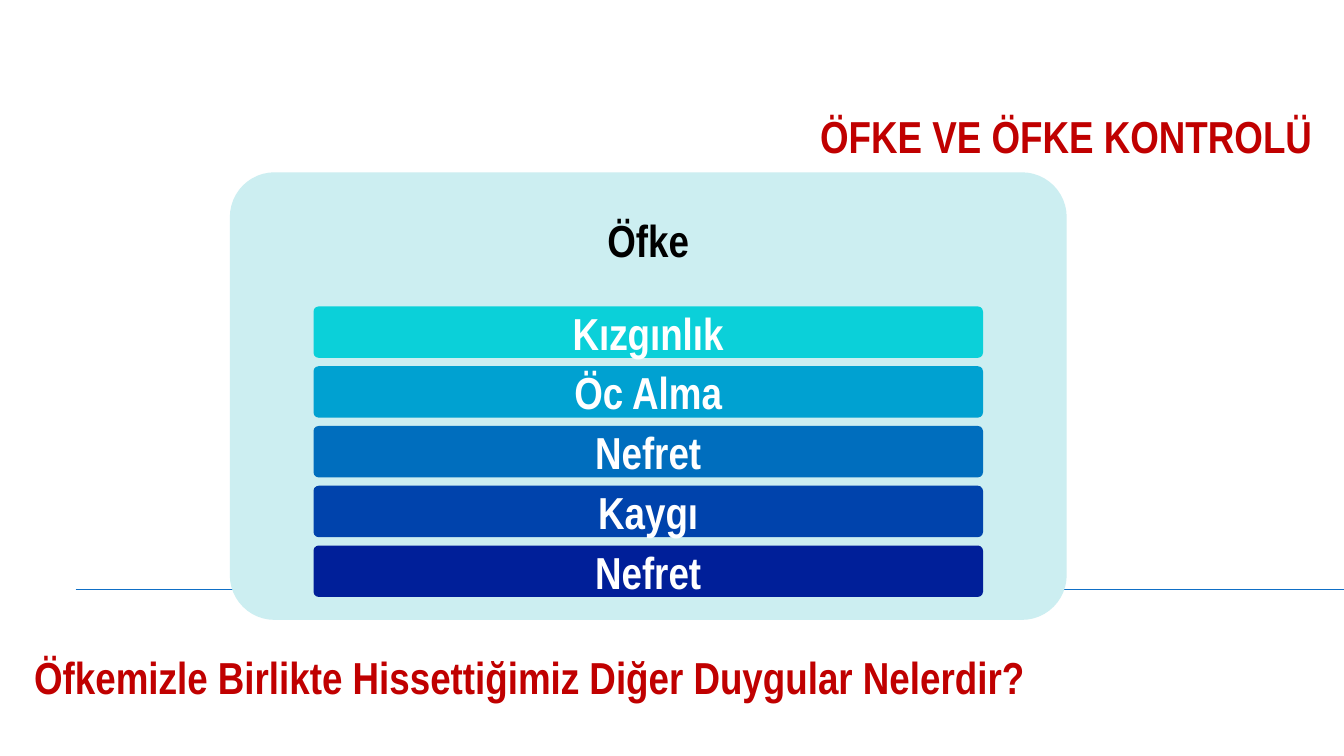
from dataclasses import dataclass

from lxml.etree import SubElement
from pptx import Presentation
from pptx.dml.color import RGBColor
from pptx.enum.shapes import MSO_CONNECTOR, MSO_SHAPE
from pptx.enum.text import MSO_ANCHOR, MSO_AUTO_SIZE, PP_ALIGN
from pptx.oxml.ns import qn
from pptx.shapes.autoshape import Shape
from pptx.slide import Slide
from pptx.text.text import TextFrame
from pptx.util import Inches, Pt

FONT = "Arial Narrow"
RED = "C00000"
WHITE = "FFFFFF"
BAR_TOP = 3.04
BAR_PITCH = 0.593


@dataclass
class Emotion:
    name: str
    fill: str


EMOTIONS = [
    Emotion("Kızgınlık", "0BD0D9"),
    Emotion("Öc Alma", "00A1D1"),
    Emotion("Nefret", "006EBE"),
    Emotion("Kaygı", "0043AC"),
    Emotion("Nefret", "001F99"),
]


def color(value: str) -> RGBColor:
    return RGBColor.from_string(value)


def write(frame: TextFrame, text: str, text_color: str,
          align: PP_ALIGN, anchor: MSO_ANCHOR) -> None:
    frame.word_wrap = True
    frame.auto_size = MSO_AUTO_SIZE.NONE
    frame.vertical_anchor = anchor
    para = frame.paragraphs[0]
    para.alignment = align
    span = para.add_run()
    span.text = text
    span.font.name = FONT
    span.font.size = Pt(32)
    span.font.bold = True
    span.font.color.rgb = color(text_color)


def add_rounded_box(slide: Slide, left: float, top: float, width: float,
                    height: float, fill: str) -> Shape:
    box = slide.shapes.add_shape(MSO_SHAPE.ROUNDED_RECTANGLE, Inches(left),
                                 Inches(top), Inches(width), Inches(height))
    box.adjustments[0] = 0.1
    box.shadow.inherit = False
    box.fill.solid()
    box.fill.fore_color.rgb = color(fill)
    box.line.fill.background()
    return box


def add_rule(slide: Slide) -> None:
    rule = slide.shapes.add_connector(MSO_CONNECTOR.STRAIGHT, Inches(0.75), Inches(5.85),
                                      Inches(13.33), Inches(5.85))
    rule.line.color.rgb = color("0F6FC6")
    rule.line.width = Pt(0.75)
    SubElement(rule._element.spPr, qn("a:effectLst"))


def add_title(slide: Slide) -> None:
    title = slide.shapes.title
    title.left, title.top = Inches(0.3), Inches(1.01)
    title.width, title.height = Inches(12.82), Inches(0.67)
    write(title.text_frame, "ÖFKE VE ÖFKE KONTROLÜ", RED, PP_ALIGN.RIGHT, MSO_ANCHOR.MIDDLE)


def add_question(slide: Slide) -> None:
    box = slide.shapes.add_textbox(Inches(0.24), Inches(6.33), Inches(12.82), Inches(0.7))
    write(box.text_frame, "Öfkemizle Birlikte Hissettiğimiz Diğer Duygular Nelerdir?",
          RED, PP_ALIGN.LEFT, MSO_ANCHOR.BOTTOM)


def add_emotion_panel(slide: Slide) -> None:
    panel = add_rounded_box(slide, 2.28, 1.71, 8.3, 4.44, "CCEEF1")
    frame = panel.text_frame
    frame.margin_top = Inches(0)
    frame.margin_bottom = Inches(3.11)
    write(frame, "Öfke", "000000", PP_ALIGN.CENTER, MSO_ANCHOR.MIDDLE)
    for index, emotion in enumerate(EMOTIONS):
        bar = add_rounded_box(slide, 3.11, BAR_TOP + index * BAR_PITCH, 6.64, 0.51, emotion.fill)
        bar.text_frame.margin_top = bar.text_frame.margin_bottom = Inches(0)
        write(bar.text_frame, emotion.name, WHITE, PP_ALIGN.CENTER, MSO_ANCHOR.MIDDLE)


def main() -> None:
    deck = Presentation()
    deck.slide_width, deck.slide_height = Inches(13.33), Inches(7.5)
    page = deck.slides.add_slide(deck.slide_layouts[5])
    add_rule(page)
    add_title(page)
    add_question(page)
    add_emotion_panel(page)
    deck.save("out.pptx")


if __name__ == "__main__":
    main()
